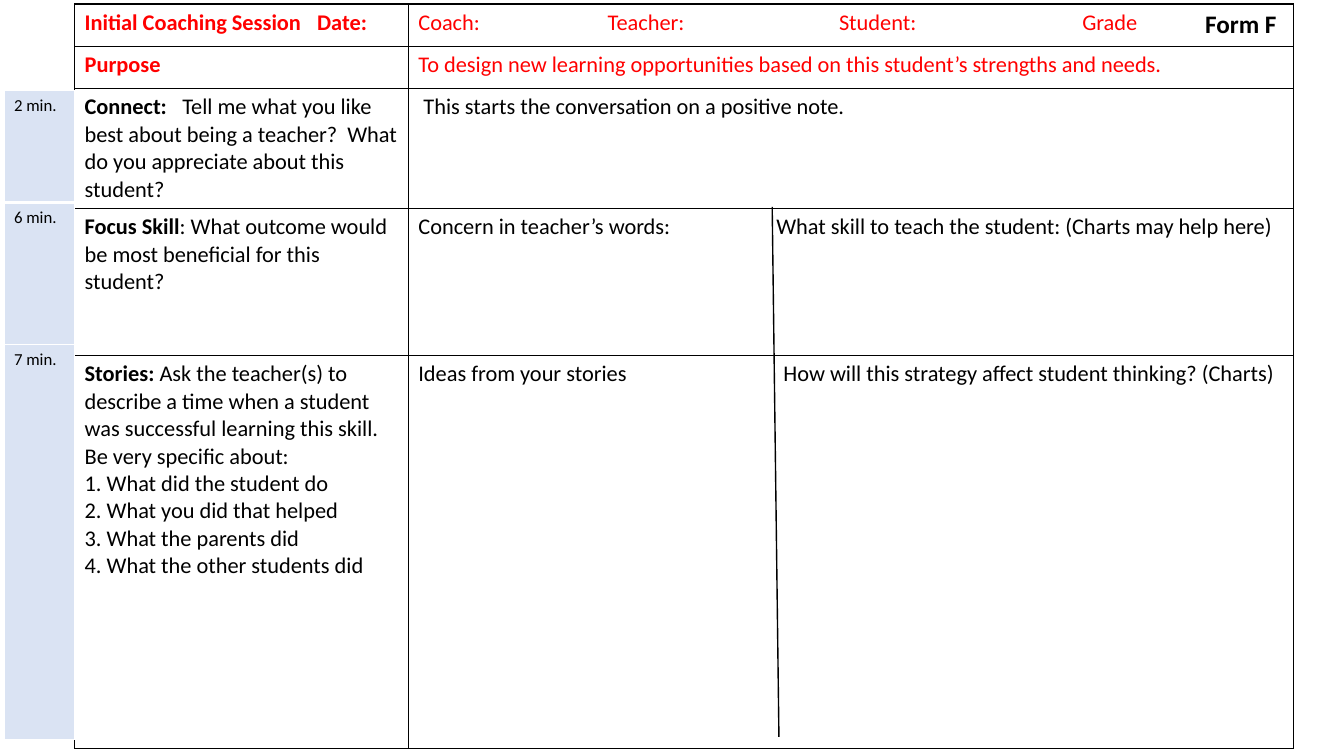
from lxml import etree
from pptx import Presentation
from pptx.dml.color import RGBColor
from pptx.enum.shapes import MSO_CONNECTOR
from pptx.enum.text import MSO_AUTO_SIZE
from pptx.oxml.ns import qn
from pptx.util import Cm, Pt

STRAIGHT = MSO_CONNECTOR.STRAIGHT
FIT_SHAPE = MSO_AUTO_SIZE.SHAPE_TO_FIT_TEXT
FONT = "Calibri"
COLORS = {"heading": "FF0000", "ink": "000000", "time": "DAE3F3", "gap": "FFFFFF"}

# A cell is (colour, tab stops in cm, paragraphs); a paragraph is a list of (text, bold).
FORM_ROWS = [
    [("heading", [5.86], [[("Initial Coaching Session\tDate:", True)]]),
     ("heading", [4.77, 10.6, 16.73], [[("Coach:\tTeacher:\tStudent:\tGrade", False)]])],
    [("heading", [], [[("Purpose", True)]]),
     ("heading", [], [[("To design new learning opportunities based on this "
                        "student’s strengths and needs.", False)]])],
    [("ink", [2.46], [[("Connect:\t", True),
                       ("Tell me what you like best about being a teacher?  What do you "
                        "appreciate about this student?", False)]]),
     ("ink", [], [[(" This starts the conversation on a positive note.", False)]])],
    [("ink", [], [[("Focus Skill", True),
                   (": What outcome would be most beneficial for this student?", False)]]),
     ("ink", [9.02], [[("Concern in teacher’s words:\tWhat skill to teach the student: "
                        "(Charts may help here)", False)]])],
    [("ink", [], [[("Stories: ", True),
                   ("Ask the teacher(s) to describe a time when a student was successful "
                    "learning this skill.", False)],
                  [("Be very specific about:", False)],
                  [("1. What did the student do", False)],
                  [("2. What you did that helped", False)],
                  [("3. What the parents did", False)],
                  [("4. What the other students did", False)]]),
     ("ink", [9.2], [[("Ideas from your stories\tHow will this strategy affect student "
                       "thinking? (Charts)", False)]])],
]
TIME_ROWS = [[("ink", [], [[(minutes, False)]])] for minutes in ("2 min.", "6 min.", "7 min.")]

FORM = {"left": 1.88, "top": 0.1, "widths": [8.41, 22.3],
        "heights": [1.07, 1.06, 3.02, 3.71, 9.9],
        "size": 16, "border": "ink", "rules": [1] * 6, "fill": None}
TIMES = {"left": 0.1, "top": 2.29, "widths": [1.78], "heights": [2.81, 3.59, 9.94],
         "size": 12, "border": "gap", "rules": [1, 3, 1, 1], "fill": "time"}
DIVIDER = [(19.46, 5.21), (19.63, 18.57)]
FORM_LABEL = ("Form F", 30.12, 0.08, 2.34, 1.02)


def rgb(name):
    return RGBColor.from_string(COLORS[name])


def add_run(paragraph, text, size, color, bold):
    run = paragraph.add_run()
    run.text = text
    run.font.name = FONT
    run.font.size = Pt(size)
    run.font.bold = bold
    run.font.color.rgb = rgb(color)


def set_tabs(paragraph, stops):
    tabs = etree.SubElement(paragraph._p.get_or_add_pPr(), qn("a:tabLst"))
    for stop in stops:
        etree.SubElement(tabs, qn("a:tab"), pos=str(Cm(stop)), algn="l")


def set_borders(cell, color, above, below):
    """Rule all four sides; the upper and lower widths are given in points."""
    properties = cell._tc.get_or_add_tcPr()
    for side, width in (("L", 1), ("R", 1), ("T", above), ("B", below)):
        line = etree.SubElement(properties, qn(f"a:ln{side}"), w=str(Pt(width)))
        solid = etree.SubElement(line, qn("a:solidFill"))
        etree.SubElement(solid, qn("a:srgbClr"), val=COLORS[color])


def fill_cell(cell, content, size):
    color, stops, paragraphs = content
    frame = cell.text_frame
    for index, runs in enumerate(paragraphs):
        paragraph = frame.add_paragraph() if index else frame.paragraphs[0]
        if stops:
            set_tabs(paragraph, stops)
        for text, bold in runs:
            add_run(paragraph, text, size, color, bold)


def add_grid(slide, rows, layout):
    widths, heights = layout["widths"], layout["heights"]
    grid = slide.shapes.add_table(
        len(rows), len(widths), Cm(layout["left"]), Cm(layout["top"]),
        Cm(sum(widths)), Cm(sum(heights))).table
    grid.first_row = grid.horz_banding = False
    for column, width in zip(grid.columns, widths):
        column.width = Cm(width)
    for r, contents in enumerate(rows):
        grid.rows[r].height = Cm(heights[r])
        for c, content in enumerate(contents):
            cell = grid.cell(r, c)
            set_borders(cell, layout["border"], *layout["rules"][r:r + 2])
            if layout["fill"]:
                cell.fill.solid()
                cell.fill.fore_color.rgb = rgb(layout["fill"])
            else:
                cell.fill.background()
            fill_cell(cell, content, layout["size"])


def add_divider(slide):
    (x1, y1), (x2, y2) = DIVIDER
    divider = slide.shapes.add_connector(STRAIGHT, Cm(x1), Cm(y1), Cm(x2), Cm(y2))
    divider.line.color.rgb = rgb("ink")
    divider.line.width = Pt(1)
    etree.SubElement(divider._element.spPr, qn("a:effectLst"))


def add_form_label(slide):
    text, *box = FORM_LABEL
    frame = slide.shapes.add_textbox(*map(Cm, box)).text_frame
    frame.word_wrap = False
    frame.auto_size = FIT_SHAPE
    add_run(frame.paragraphs[0], text, 18, "ink", True)


def main():
    deck = Presentation()
    deck.slide_width, deck.slide_height = Cm(33.87), Cm(19.05)
    slide = deck.slides.add_slide(deck.slide_layouts[6])
    add_grid(slide, FORM_ROWS, FORM)
    add_grid(slide, TIME_ROWS, TIMES)
    add_divider(slide)
    add_form_label(slide)
    deck.save("out.pptx")


if __name__ == "__main__":
    main()
